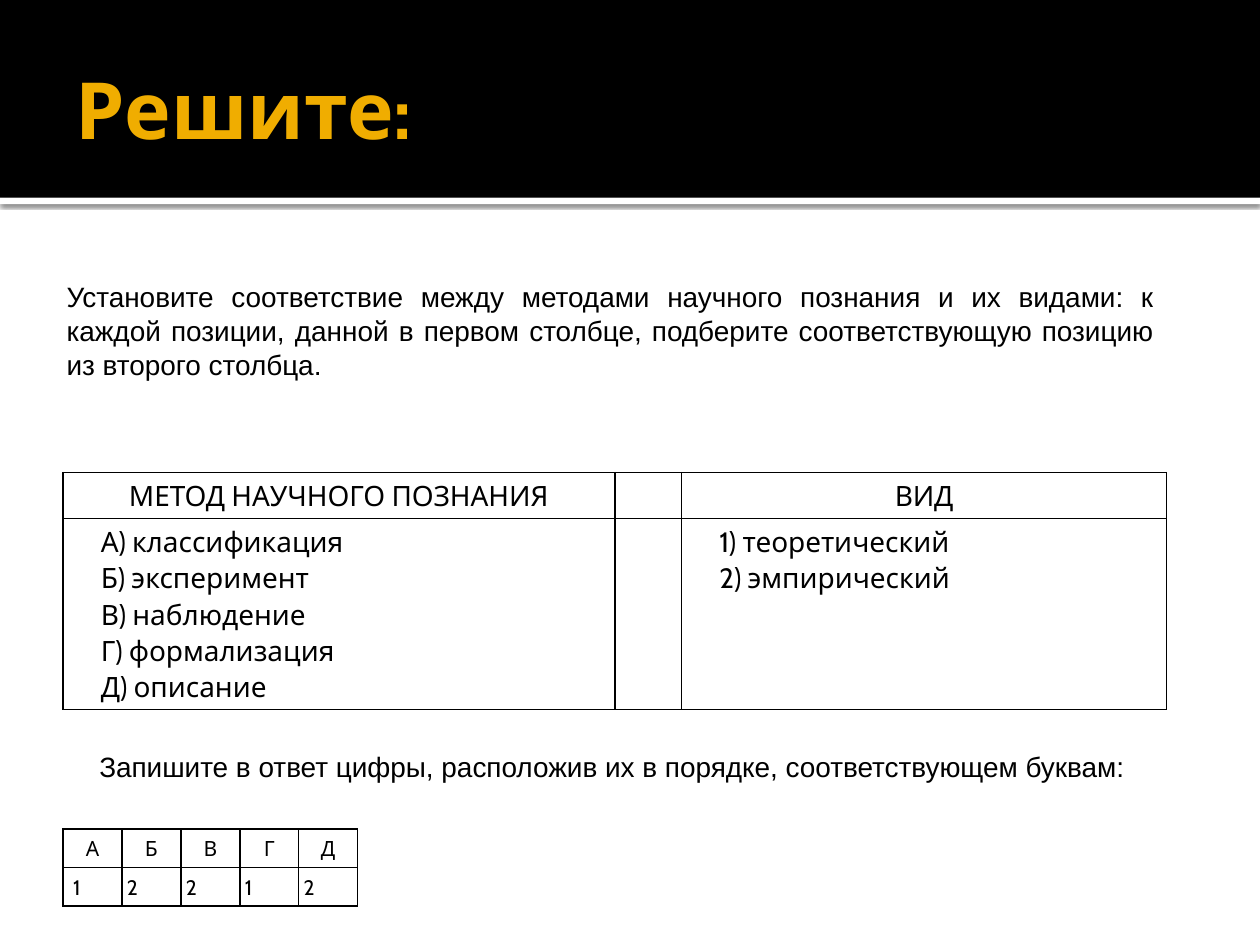
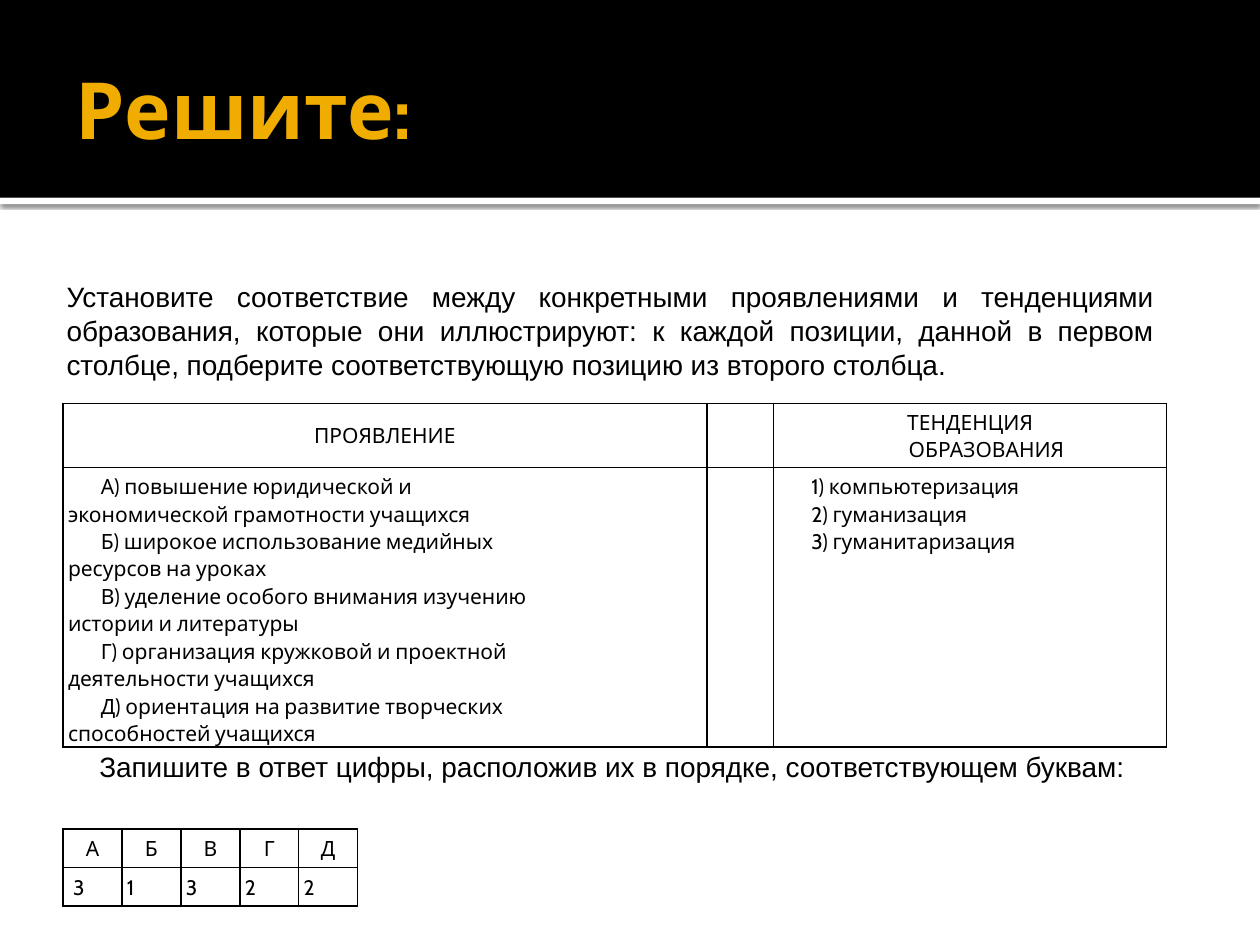
from pptx import Presentation
from pptx.dml.color import RGBColor
from pptx.enum.shapes import MSO_SHAPE
from pptx.enum.text import MSO_ANCHOR, PP_ALIGN
from pptx.oxml.ns import qn
from pptx.util import Inches, Pt
from lxml.etree import SubElement

INK = {"band": "000000", "rule": "FFFFFF", "title": "F0AD00", "text": "000000"}
LEFT, MID, JUST = PP_ALIGN.LEFT, PP_ALIGN.CENTER, PP_ALIGN.JUSTIFY
DENT = Inches(0.26)

deck = Presentation()
deck.slide_width, deck.slide_height = Inches(10), Inches(7.5)
COL, ROW = deck.slide_width / 100, deck.slide_height / 100


def write(frame, lines, size, face, align, tone="text", bold=False, space=1.0):
    for i, (text, dent, gap) in enumerate(lines):
        para = frame.paragraphs[0] if i == 0 else frame.add_paragraph()
        para.alignment, para.line_spacing = align, space
        para.space_before = Pt(gap)
        para._p.get_or_add_pPr().set("indent", str(dent))
        if text:
            run = para.add_run()
            run.text = text
            run.font.size, run.font.name, run.font.bold = Pt(size), face, bold
            run.font.color.rgb = RGBColor.from_string(INK[tone])
        else:
            SubElement(para._p, qn("a:endParaRPr"), sz=str(size * 100))


def grid(slide, top, wide, tall, cells, size, low):
    frame = slide.shapes.add_table(
        len(tall), len(wide), int(5 * COL), int(top * ROW),
        int(sum(wide) * COL), int(sum(tall) * ROW))
    table = frame.table
    table.first_row = table.horz_banding = False
    for part, span in zip(table.columns, wide):
        part.width = int(span * COL)
    for part, span in zip(table.rows, tall):
        part.height = int(span * ROW)
    for r, line in enumerate(cells):
        for c, lines in enumerate(line):
            cell = table.cell(r, c)
            cell.margin_left = cell.margin_right = Inches(0.04)
            cell.margin_top = cell.margin_bottom = Inches(0.04)
            cell.vertical_anchor = low if r else MSO_ANCHOR.MIDDLE
            cell.fill.background()
            props = cell._tc.get_or_add_tcPr()
            for i, side in enumerate("LRTB"):
                edge = SubElement(props, qn("a:ln" + side), w=str(Pt(1)))
                fill = SubElement(edge, qn("a:solidFill"))
                SubElement(fill, qn("a:srgbClr"), val=INK["text"])
                props.insert(i, edge)
            write(cell.text_frame, lines, size, "Cabin",
                  LEFT if r else MID, space=1.07)


tasks = [
    {
        "ask": "Установите соответствие между методами научного познания и их видами: к каждой позиции, данной в первом столбце, подберите соответствующую позицию из второго столбца.",
        "heads": (["МЕТОД НАУЧНОГО ПОЗНАНИЯ"], [""], ["ВИД"]),
        "lists": (
            ["А) классификация", "Б) эксперимент", "В) наблюдение",
             "Г) формализация", "Д) описание"],
            [""],
            ["1) теоретический", "2) эмпирический"]),
        "top": 50, "wide": (43.8, 5.3, 38.5), "tall": (4.87, 20.2),
        "size": 16, "key": "12212",
    },
    {
        "ask": "Установите соответствие между конкретными проявлениями и тенденциями образования, которые они иллюстрируют: к каждой позиции, данной в первом столбце, подберите соответствующую позицию из второго столбца.",
        "heads": (["ПРОЯВЛЕНИЕ"], [""], ["ТЕНДЕНЦИЯ", "ОБРАЗОВАНИЯ"]),
        "lists": (
            ["А) повышение юридической и", "экономической грамотности учащихся",
             "Б) широкое использование медийных", "ресурсов на уроках",
             "В) уделение особого внимания изучению", "истории и литературы",
             "Г) организация кружковой и проектной", "деятельности учащихся",
             "Д) ориентация на развитие творческих", "способностей учащихся"],
            [""],
            ["1) компьютеризация", "2) гуманизация", "3) гуманитаризация"]),
        "top": 42.67, "wide": (51.1, 5.3, 31.2), "tall": (6.8, 29.6),
        "size": 12, "key": "31322",
    },
]

for task in tasks:
    slide = deck.slides.add_slide(deck.slide_layouts[6])

    for tone, top, tall in (("rule", 20.93, 0.67), ("band", 0, 20.93)):
        bar = slide.shapes.add_shape(
            MSO_SHAPE.RECTANGLE, 0, int(top * ROW), deck.slide_width, int(tall * ROW))
        bar.shadow.inherit = False
        bar.fill.solid()
        bar.fill.fore_color.rgb = RGBColor.from_string(INK[tone])
        bar.line.fill.background()
        if tone == "rule":
            glow = SubElement(
                bar._element.spPr.find(qn("a:effectLst")), qn("a:outerShdw"),
                blurRad=str(Pt(2.5)), dist=str(Pt(0.8)), dir="5400000")
            shade = SubElement(glow, qn("a:srgbClr"), val=INK["band"])
            SubElement(shade, qn("a:alpha"), val="60000")

    title = slide.shapes.add_textbox(
        int(5 * COL), int(2.27 * ROW), int(90 * COL), int(18.27 * ROW)).text_frame
    title.margin_right = Inches(0.05)
    ask = slide.shapes.add_textbox(
        int(4.3 * COL), int(28.67 * ROW), int(88.3 * COL), int(55.2 * ROW)).text_frame
    for frame in (title, ask):
        frame.word_wrap = True
        frame.vertical_anchor = MSO_ANCHOR.MIDDLE
    write(title, [("Решите:", 0, 0)], 45, "Cabin", LEFT, "title", True)
    write(ask, [
        (task["ask"], 0, 0),
        ("Запишите в ответ цифры, расположив их в порядке, соответствующем буквам:", DENT, 211),
    ], 16, "Arial", JUST)

    heads = [[(text, DENT if i else 0, 0) for i, text in enumerate(cell)]
             for cell in task["heads"]]
    lists = [[(text, DENT if text[1:2] == ")" else 0, 0) for text in cell]
             for cell in task["lists"]]
    grid(slide, task["top"], task["wide"], task["tall"], [heads, lists],
         task["size"], MSO_ANCHOR.TOP)

    marks = [[(mark, 0, 0)] for mark in "АБВГД"]
    key = [[(mark, 0 if i else Inches(0.04), 0)] for i, mark in enumerate(task["key"])]
    grid(slide, 87.73, [4.68] * 5, [4.07] * 2, [marks, key], 12, MSO_ANCHOR.MIDDLE)

deck.save("out.pptx")
